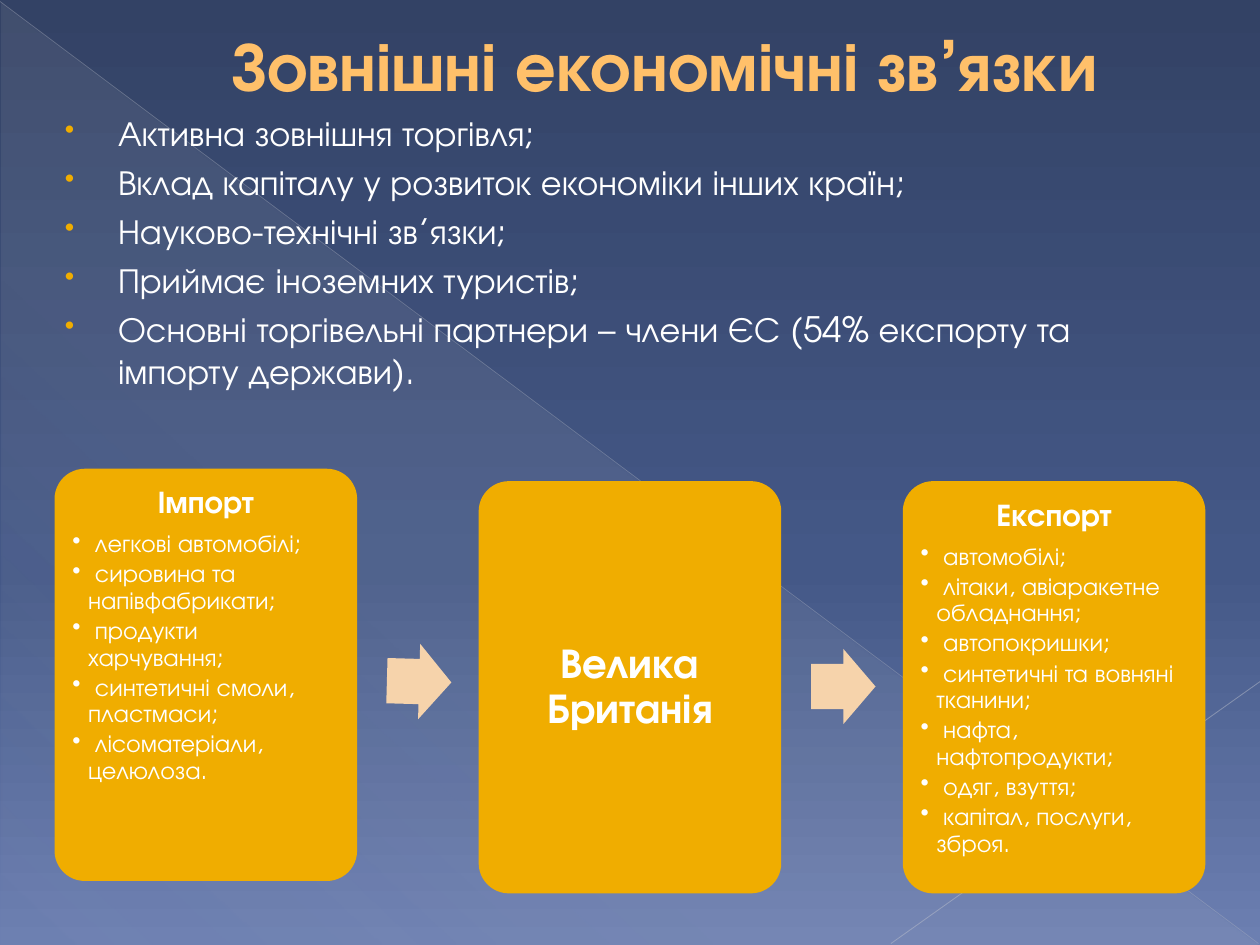
"""Build the slide on the foreign economic relations of Great Britain."""
from dataclasses import dataclass

from lxml.etree import SubElement
from pptx import Presentation
from pptx.dml.color import RGBColor
from pptx.enum.shapes import MSO_CONNECTOR, MSO_SHAPE
from pptx.enum.text import MSO_ANCHOR, PP_ALIGN
from pptx.oxml.ns import qn
from pptx.util import Cm, Pt

FONT = "TeX Gyre Adventor"
WHITE = RGBColor(0xFF, 0xFF, 0xFF)
PEACH = RGBColor(0xFF, 0xC0, 0x6A)
AMBER = RGBColor(0xF0, 0xAD, 0x00)
SAND = RGBColor(0xF6, 0xD3, 0xAB)
NIGHT = RGBColor(0x33, 0x42, 0x65)
DENIM = RGBColor(0x44, 0x58, 0x87)
SKY = RGBColor(0x6C, 0x7F, 0xB1)
MIST = RGBColor(0xD4, 0xD4, 0xD6)
LONG_RAY = RGBColor(0xB9, 0xBD, 0xC8)
SHORT_RAY = RGBColor(0xC1, 0xC4, 0xCE)

COLUMN_LEFT, COLUMN_PITCH = 1.1, 8.55
CARD_WIDTH, CARD_HEIGHT = 6.1, 8.31
ARROW_LEFT, ARROW_WIDTH, ARROW_HEIGHT = 7.8, 1.3, 1.52


@dataclass(frozen=True)
class Stop:
    position: int
    color: RGBColor
    opacity: int = 100


@dataclass(frozen=True)
class Ray:
    start: tuple[float, float]
    end: tuple[float, float]
    color: RGBColor
    width: float
    opacity: int


@dataclass(frozen=True)
class Card:
    heading: str
    top: float
    goods: tuple[str, ...] = ()
    size: int = 18
    inset: float = 0.18
    anchor: MSO_ANCHOR = MSO_ANCHOR.TOP


@dataclass(frozen=True)
class Arrow:
    top: float
    rotation: float = 0


RELATIONS = (
    "Активна зовнішня торгівля;",
    "Вклад капіталу у розвиток економіки інших країн;",
    "Науково-технічні зв’язки;",
    "Приймає іноземних туристів;",
    "Основні торгівельні партнери – члени ЄС (54% експорту та імпорту держави).",
)
CARDS = (
    Card("Імпорт", 9.45, (
        " легкові автомобілі;",
        " сировина та напівфабрикати;",
        " продукти харчування;",
        " синтетичні смоли, пластмаси;",
        " лісоматеріали, целюлоза.",
    )),
    Card("Велика Британія", 9.7, size=24, inset=0.25, anchor=MSO_ANCHOR.MIDDLE),
    Card("Експорт", 9.7, (
        " автомобілі;",
        " літаки, авіаракетне обладнання;",
        " автопокришки;",
        " синтетичні та вовняні тканини;",
        " нафта, нафтопродукти;",
        " одяг, взуття;",
        " капітал, послуги, зброя.",
    )),
)
ARROWS = (Arrow(12.98, 1.6), Arrow(13.08))
RAYS = (
    Ray((0, 0.03), (25.37, 19.02), LONG_RAY, 0.39, 35),
    Ray((25.4, 13.74), (17.96, 19.02), SHORT_RAY, 0.47, 45),
)
BACKDROP = (Stop(0, NIGHT), Stop(60, DENIM), Stop(100, SKY))
GLOW = (Stop(0, MIST, 10), Stop(70, MIST, 8), Stop(100, MIST, 1))


def set_opacity(color_element, opacity: int) -> None:
    """Give a colour element an opacity in percent."""
    SubElement(color_element, qn("a:alpha"), val=str(opacity * 1000))


def set_gradient(fill, owner, stops: tuple[Stop, ...], angle: float) -> None:
    """Fill with a linear gradient whose angle runs clockwise."""
    fill.gradient()
    fill.gradient_angle = 360 - angle
    stop_list = owner.find(".//" + qn("a:gsLst"))
    for old_stop in list(stop_list):
        stop_list.remove(old_stop)
    for stop in stops:
        entry = SubElement(stop_list, qn("a:gs"), pos=str(stop.position * 1000))
        color = SubElement(entry, qn("a:srgbClr"), val=str(stop.color))
        if stop.opacity < 100:
            set_opacity(color, stop.opacity)


def write(frame, text: str, *, size: float, color=WHITE, bold=False, align=PP_ALIGN.LEFT,
          margin=0.0, indent=0.0, before=0.0, after=0.0, spacing=1.0, level=0,
          bullet=False, bullet_color=WHITE, bullet_size=100) -> None:
    """Add one formatted paragraph, using the empty first one if there is one."""
    first = not frame.text
    paragraph = frame.paragraphs[0] if first else frame.add_paragraph()
    paragraph.alignment, paragraph.level = align, level
    paragraph.line_spacing = spacing
    paragraph.space_before = Pt(0 if first else before)
    paragraph.space_after = Pt(after)
    properties = paragraph._p.get_or_add_pPr()
    properties.set("marL", str(Cm(margin)))
    properties.set("indent", str(Cm(indent)))
    if bullet:
        tint = SubElement(properties, qn("a:buClr"))
        SubElement(tint, qn("a:srgbClr"), val=str(bullet_color))
        SubElement(properties, qn("a:buSzPct"), val=str(bullet_size * 1000))
        SubElement(properties, qn("a:buChar"), char="•")
    run = paragraph.add_run()
    run.text = text
    run.font.name, run.font.size, run.font.bold = FONT, Pt(size), bold
    run.font.color.rgb = color


def add_text_frame(slide, left: float, top: float, width: float, height: float, anchor):
    """Add a wrapping text box and return its frame."""
    frame = slide.shapes.add_textbox(Cm(left), Cm(top), Cm(width), Cm(height)).text_frame
    frame.word_wrap = True
    frame.vertical_anchor = anchor
    return frame


def add_block(slide, kind, left: float, top: float, width: float, height: float, color=None):
    """Add a preset shape without line or shadow."""
    block = slide.shapes.add_shape(kind, Cm(left), Cm(top), Cm(width), Cm(height))
    block.shadow.inherit = False
    block.line.fill.background()
    if color is not None:
        block.fill.solid()
        block.fill.fore_color.rgb = color
    return block


def add_ray(slide, ray: Ray) -> None:
    """Draw a thin translucent line."""
    connector = slide.shapes.add_connector(
        MSO_CONNECTOR.STRAIGHT, *map(Cm, ray.start), *map(Cm, ray.end))
    connector.line.width = Pt(ray.width)
    connector.line.color.rgb = ray.color
    properties = connector._element.spPr
    set_opacity(properties.find(".//" + qn("a:srgbClr")), ray.opacity)
    SubElement(properties, qn("a:effectLst"))


def add_card(slide, card: Card, left: float) -> None:
    """Draw a rounded card with its heading and list of goods."""
    block = add_block(slide, MSO_SHAPE.ROUNDED_RECTANGLE, left, card.top,
                      CARD_WIDTH, CARD_HEIGHT, AMBER)
    block.adjustments[0] = 0.1
    frame = block.text_frame
    frame.word_wrap, frame.vertical_anchor = True, card.anchor
    frame.margin_left = frame.margin_right = Cm(card.inset)
    frame.margin_top = frame.margin_bottom = Cm(card.inset)
    write(frame, card.heading, size=card.size, bold=True, align=PP_ALIGN.CENTER,
          spacing=0.9, after=card.size * 0.35)
    for item in card.goods:
        write(frame, item, size=14, margin=0.32, indent=-0.32, spacing=0.9,
              after=2.1, level=1, bullet=True)


def add_arrow(slide, arrow: Arrow, left: float) -> None:
    """Draw a block arrow between two cards."""
    block = add_block(slide, MSO_SHAPE.RIGHT_ARROW, left, arrow.top,
                      ARROW_WIDTH, ARROW_HEIGHT, SAND)
    block.adjustments[0], block.adjustments[1] = 0.6, 0.5
    block.rotation = arrow.rotation


def main() -> None:
    """Build and save the presentation."""
    deck = Presentation()
    deck.slide_width, deck.slide_height = Cm(25.4), Cm(19.05)
    slide = deck.slides.add_slide(deck.slide_layouts[6])
    set_gradient(slide.background.fill, slide.element, BACKDROP, 90)
    glow = add_block(slide, MSO_SHAPE.RIGHT_TRIANGLE, 0.03, 0.05, 25.35, 19)
    set_gradient(glow.fill, glow.element, GLOW, 133)
    for ray in RAYS:
        add_ray(slide, ray)
    title = add_text_frame(slide, 1.3, 0, 22.86, 2.59, MSO_ANCHOR.MIDDLE)
    write(title, "Зовнішні економічні зв’язки", size=39.6, color=PEACH, bold=True,
          align=PP_ALIGN.CENTER, margin=1.35)
    relations = add_text_frame(slide, 0.89, 2.13, 22.86, 12.7, MSO_ANCHOR.TOP)
    for relation in RELATIONS:
        write(relations, relation, size=20, margin=1.24, indent=-1.07, before=4,
              bullet=True, bullet_color=AMBER, bullet_size=80)
    for column, card in enumerate(CARDS):
        add_card(slide, card, COLUMN_LEFT + column * COLUMN_PITCH)
    for column, arrow in enumerate(ARROWS):
        add_arrow(slide, arrow, ARROW_LEFT + column * COLUMN_PITCH)
    deck.save("out.pptx")


if __name__ == "__main__":
    main()
